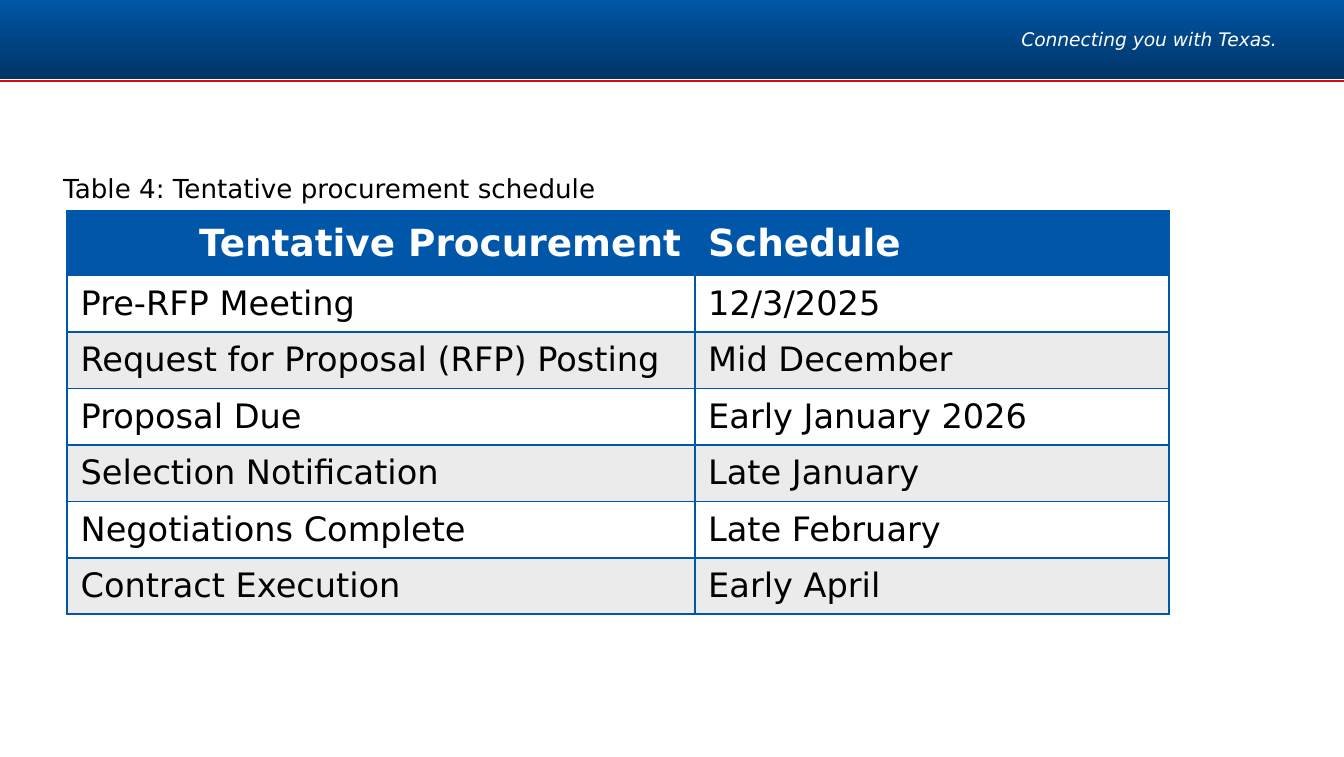
"""Build the tentative procurement schedule slide."""
import dataclasses
import typing

import lxml.etree
import pptx
import pptx.dml.color
import pptx.enum.shapes
import pptx.enum.text
import pptx.oxml.ns
import pptx.util

Inches = pptx.util.Inches
Pt = pptx.util.Pt
ALIGN = pptx.enum.text.PP_ALIGN
MIDDLE = pptx.enum.text.MSO_ANCHOR.MIDDLE
qn = pptx.oxml.ns.qn

FONT = "DejaVu Sans"
COLORS = {
    "band_top": "0057A8",
    "band_bottom": "003567",
    "rule": "D90D0D",
    "table": "0056A9",
    "stripe": "EBEBEB",
    "white": "FFFFFF",
    "black": "000000",
}


@dataclasses.dataclass
class Milestone:
    name: str
    date: str


MILESTONES = [
    Milestone("Pre-RFP Meeting", "12/3/2025"),
    Milestone("Request for Proposal (RFP) Posting", "Mid December"),
    Milestone("Proposal Due", "Early January 2026"),
    Milestone("Selection Notification", "Late January"),
    Milestone("Negotiations Complete", "Late February"),
    Milestone("Contract Execution", "Early April"),
]


def rgb(name: str) -> pptx.dml.color.RGBColor:
    return pptx.dml.color.RGBColor.from_string(COLORS[name])


def write(tf, text: str, size: int, color: str, align=ALIGN.LEFT,
          bold: bool = False, italic: bool = False):
    p = tf.paragraphs[0]
    p.text = text
    p.alignment = align
    p.font.name = FONT
    p.font.size = Pt(size)
    p.font.bold = bold
    p.font.italic = italic
    p.font.color.rgb = rgb(color)
    return p


def draw_banner(s) -> None:
    sp = s.shapes.add_shape(pptx.enum.shapes.MSO_SHAPE.RECTANGLE, Inches(-0.01),
                            Inches(-0.03), Inches(10.02), Inches(0.62))
    sp.shadow.inherit = False
    sp.line.fill.background()
    sp.fill.gradient()
    sp.fill.gradient_angle = 270
    for stop, name in zip(sp.fill.gradient_stops, ("band_top", "band_bottom")):
        stop.color.rgb = rgb(name)

    rule = s.shapes.add_connector(pptx.enum.shapes.MSO_CONNECTOR.STRAIGHT,
                                  Inches(-0.01), Inches(0.6), Inches(10.01), Inches(0.6))
    rule.line.color.rgb = rgb("rule")
    rule.line.width = Pt(1)
    lxml.etree.SubElement(rule._element.spPr, qn("a:effectLst"))

    tf = s.shapes.add_textbox(Inches(7.17), 0, Inches(2.33), Inches(0.6)).text_frame
    tf.margin_left = tf.margin_top = tf.margin_right = tf.margin_bottom = 0
    tf.vertical_anchor = MIDDLE
    tf.word_wrap = True
    p = write(tf, "Connecting you with Texas.", 10, "white", ALIGN.RIGHT, italic=True)
    p.line_spacing = 0.9


def draw_caption(s) -> None:
    sp = s.shapes.title
    sp.left, sp.top, sp.width, sp.height = map(Inches, (0.37, 1.23, 4.23, 0.34))
    tf = sp.text_frame
    tf.word_wrap = False
    tf.auto_size = pptx.enum.text.MSO_AUTO_SIZE.SHAPE_TO_FIT_TEXT
    tf.vertical_anchor = pptx.enum.text.MSO_ANCHOR.TOP
    write(tf, "Table 4: Tentative procurement schedule", 14, "black")


def style_cell(cell, fill: typing.Optional[str]) -> None:
    cell.vertical_anchor = MIDDLE
    tc_pr = cell._tc.get_or_add_tcPr()
    for side in "LRTB":
        ln = lxml.etree.SubElement(tc_pr, qn(f"a:ln{side}"), w=str(Pt(1)))
        solid = lxml.etree.SubElement(ln, qn("a:solidFill"))
        lxml.etree.SubElement(solid, qn("a:srgbClr"), val=COLORS["table"])
    if fill:
        cell.fill.solid()
        cell.fill.fore_color.rgb = rgb(fill)
    else:
        cell.fill.background()


def draw_schedule(s, milestones: typing.List[Milestone]) -> None:
    table = s.shapes.add_table(len(milestones) + 1, 2, Inches(0.5), Inches(1.57),
                               Inches(8.2), Inches(3)).table
    for column, width in zip(table.columns, (4.67, 3.53)):
        column.width = Inches(width)
    for i, row in enumerate(table.rows):
        row.height = Inches(0.42 if i else 0.48)

    headings = ("Tentative Procurement", "Schedule")
    for cell, text, align in zip(table.rows[0].cells, headings, (ALIGN.RIGHT, ALIGN.LEFT)):
        style_cell(cell, "table")
        write(cell.text_frame, text, 20, "white", align, bold=True)
    for i, milestone in enumerate(milestones, 1):
        for cell, text in zip(table.rows[i].cells, (milestone.name, milestone.date)):
            style_cell(cell, None if i % 2 else "stripe")
            write(cell.text_frame, text, 18, "black")


def main() -> None:
    prs = pptx.Presentation()
    prs.slide_width, prs.slide_height = Inches(10), Inches(5.63)
    s = prs.slides.add_slide(prs.slide_layouts[5])
    draw_banner(s)
    draw_caption(s)
    draw_schedule(s, MILESTONES)
    prs.save("out.pptx")


if __name__ == "__main__":
    main()
